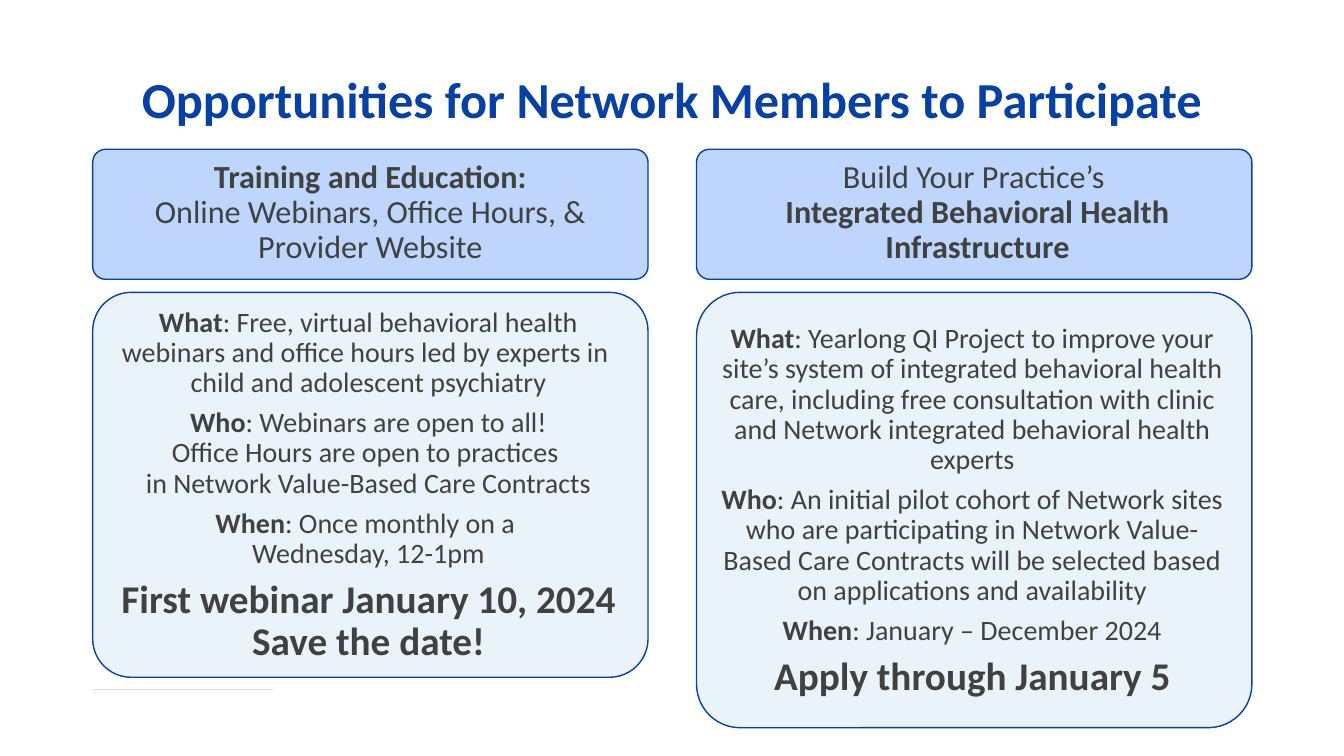
from lxml.etree import SubElement
from pptx import Presentation
from pptx.dml.color import RGBColor
from pptx.enum.shapes import MSO_CONNECTOR, MSO_SHAPE
from pptx.enum.text import MSO_ANCHOR, MSO_AUTO_SIZE, PP_ALIGN
from pptx.oxml.ns import qn
from pptx.util import Pt

COLORS = {
    "title": "0841A2",
    "outline": "0841A1",
    "header": "BED5FC",
    "body": "EAF2FA",
    "text": "414142",
}
FONT = "Calibri"
COLUMN_LEFTS = (66.2, 497.5)
PANEL_WIDTH = 396.7
HEADER_TOP, HEADER_HEIGHT = 106.6, 92.9
BODY_TOP = 208.8
HEADER_SIZE, BODY_SIZE, CALL_SIZE = 23, 20, 28

# A paragraph is (size, [(text, bold), ...]); "\n" is a line break.
COLUMNS = [
    {
        "header_text_box": (74.2, 108.7, 380.9, 87.1),
        "header": [
            (HEADER_SIZE, [("Training and Education:\n", True),
                           ("Online Webinars, Office Hours, & Provider Website", False)]),
        ],
        "body_height": 275,
        "body_text_box": (71.3, 222.5, 383.8, 249.1),
        "body": [
            (BODY_SIZE, [("What", True),
                         (": Free, virtual behavioral health webinars and office hours "
                          "led by experts in \nchild and adolescent psychiatry", False)]),
            (BODY_SIZE, [("Who", True),
                         (": Webinars are open to all!\nOffice Hours are open to practices "
                          "\nin Network Value-Based Care Contracts", False)]),
            (BODY_SIZE, [("When", True),
                         (": Once monthly on a \nWednesday, 12-1pm", False)]),
            (CALL_SIZE, [("First webinar January 10, 2024\nSave the date!", True)]),
        ],
    },
    {
        "header_text_box": (505.4, 108.7, 385.9, 87.1),
        "header": [
            (HEADER_SIZE, [("Build Your Practice’s \n", False),
                           ("Integrated Behavioral Health Infrastructure", True)]),
        ],
        "body_height": 311,
        "body_text_box": (502.6, 224.6, 383.8, 281.5),
        "body": [
            (BODY_SIZE, [("What", True),
                         (": Yearlong QI Project to improve your site’s system of integrated "
                          "behavioral health care, including free consultation with clinic "
                          "and Network integrated behavioral health experts", False)]),
            (BODY_SIZE, [("Who", True),
                         (": An initial pilot cohort of Network sites who are participating in "
                          "Network Value-Based Care Contracts will be selected based on "
                          "applications and availability", False)]),
            (BODY_SIZE, [("When", True), (": January – December 2024", False)]),
            (CALL_SIZE, [("Apply through January 5", True)]),
        ],
    },
]


def color(name):
    return RGBColor.from_string(COLORS[name])


def apply_format(target, values):
    for name, value in values.items():
        setattr(target, name, value)


def add_run(paragraph, text, size, bold, color_name):
    """Add formatted text, turning each newline into a line break."""
    for index, line in enumerate(text.split("\n")):
        if index:
            paragraph.add_line_break()
        if line:
            run = paragraph.add_run()
            run.text = line
            apply_format(run.font, {"name": FONT, "size": Pt(size), "bold": bold})
            run.font.color.rgb = color(color_name)


def add_title(slide, text):
    title = slide.shapes.title
    apply_format(title, {"left": Pt(66.2), "top": Pt(13.7),
                         "width": Pt(828), "height": Pt(104.4)})
    apply_format(title.text_frame, {"auto_size": MSO_AUTO_SIZE.NONE, "word_wrap": True,
                                    "vertical_anchor": MSO_ANCHOR.MIDDLE})
    paragraph = title.text_frame.paragraphs[0]
    apply_format(paragraph, {"alignment": PP_ALIGN.CENTER, "line_spacing": 1.2})
    add_run(paragraph, text, 36, True, "title")


def add_panel(slide, left, top, height, fill_name):
    panel = slide.shapes.add_shape(MSO_SHAPE.ROUNDED_RECTANGLE,
                                   Pt(left), Pt(top), Pt(PANEL_WIDTH), Pt(height))
    panel.adjustments[0] = 0.1
    panel.shadow.inherit = False
    panel.fill.solid()
    panel.fill.fore_color.rgb = color(fill_name)
    panel.line.color.rgb = color("outline")
    panel.line.width = Pt(1)


def add_text(slide, box, paragraphs):
    frame = slide.shapes.add_textbox(*map(Pt, box)).text_frame
    margins = {f"margin_{side}": Pt(7.2) for side in ("left", "top", "right", "bottom")}
    apply_format(frame, {"word_wrap": True, "vertical_anchor": MSO_ANCHOR.MIDDLE, **margins})
    for index, (size, runs) in enumerate(paragraphs):
        paragraph = frame.add_paragraph() if index else frame.paragraphs[0]
        apply_format(paragraph, {"alignment": PP_ALIGN.CENTER, "line_spacing": 0.9,
                                 "space_after": Pt(0.35 * size)})
        for text, bold in runs:
            add_run(paragraph, text, size, bold, "text")


def add_footer_rule(slide):
    rule = slide.shapes.add_connector(MSO_CONNECTOR.STRAIGHT,
                                      Pt(66.2), Pt(492.5), Pt(195.1), Pt(492.5))
    rule.line.width = Pt(0.25)
    rule.line.color.rgb = color("text")
    properties = rule._element.spPr
    rgb = properties.find(".//" + qn("a:srgbClr"))
    SubElement(rgb, qn("a:alpha"), val="50000")
    SubElement(properties, qn("a:effectLst"))


def main():
    presentation = Presentation()
    presentation.slide_width, presentation.slide_height = Pt(960), Pt(540)
    slide = presentation.slides.add_slide(presentation.slide_layouts[5])
    add_footer_rule(slide)
    add_title(slide, "Opportunities for Network Members to Participate")
    for left, column in zip(COLUMN_LEFTS, COLUMNS):
        add_panel(slide, left, HEADER_TOP, HEADER_HEIGHT, "header")
        add_text(slide, column["header_text_box"], column["header"])
        add_panel(slide, left, BODY_TOP, column["body_height"], "body")
        add_text(slide, column["body_text_box"], column["body"])
    presentation.save("out.pptx")


if __name__ == "__main__":
    main()
